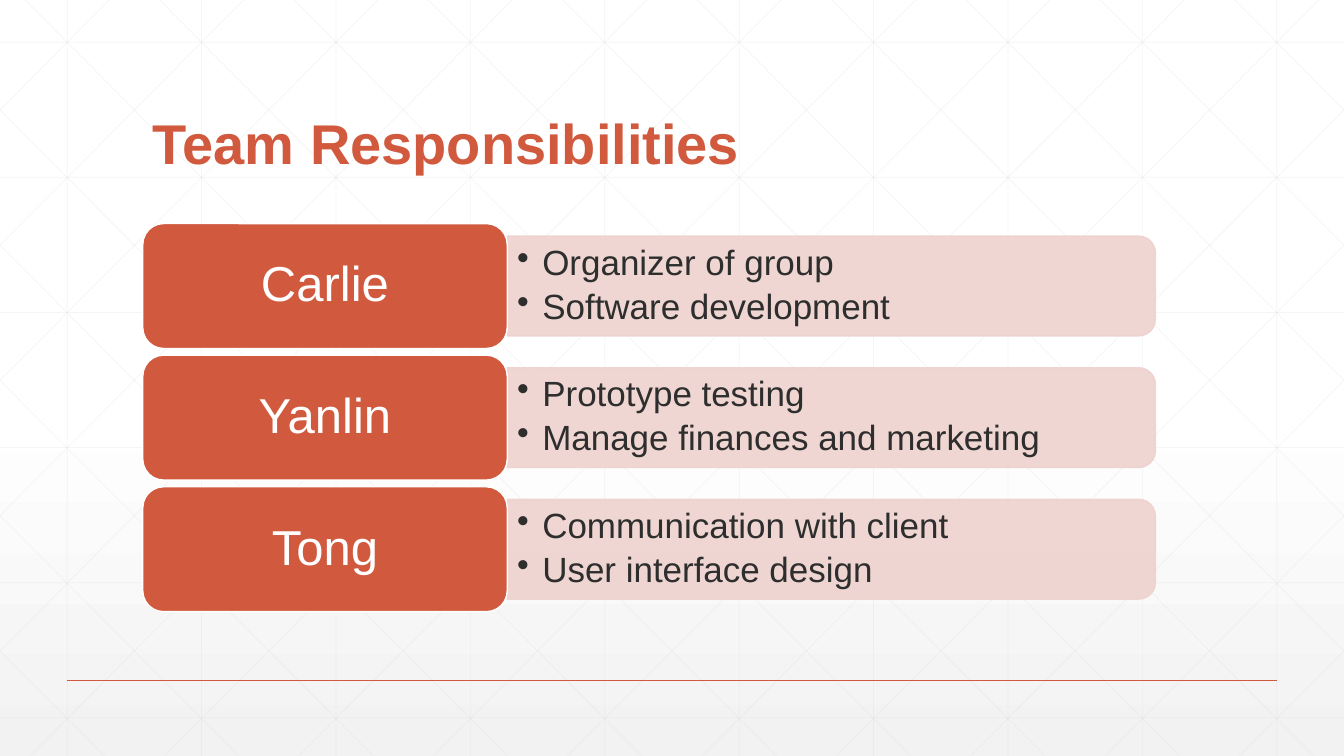
from copy import deepcopy
from dataclasses import dataclass

from lxml.etree import SubElement
from pptx import Presentation
from pptx.dml.color import RGBColor as Rgb
from pptx.enum.shapes import MSO_CONNECTOR as Link, MSO_SHAPE as Form
from pptx.enum.text import MSO_ANCHOR as Anchor, PP_ALIGN as Align
from pptx.oxml.ns import qn
from pptx.shapes.autoshape import Shape
from pptx.slide import Slide
from pptx.text.text import TextFrame as Frame
from pptx.util import Pt


@dataclass(frozen=True)
class Theme:
    font: str = "Arial"
    main: str = "D15A3E"
    tint: str = "EED2CE"
    ink: str = "2D2E2D"
    white: str = "FFFFFF"
    shade: str = "F2F2F2"
    mesh: str = "D9D9D9"
    head: float = 40
    name: float = 35
    task: float = 25


@dataclass(frozen=True)
class Member:
    name: str
    tasks: tuple[str, ...]


@dataclass(frozen=True)
class Stroke:
    x1: float
    y1: float
    x2: float
    y2: float


THEME = Theme()
WIDE, HIGH = 960, 540
STEP = 96
TEAM = (
    Member("Carlie", ("Organizer of group", "Software development")),
    Member("Yanlin", ("Prototype testing", "Manage finances and marketing")),
    Member("Tong", ("Communication with client", "User interface design")),
)


def fade(shape: Shape, share: int) -> None:
    for tone in shape.element.spPr.iter(qn("a:srgbClr")):
        SubElement(tone, qn("a:alpha")).set("val", str(share * 1000))


def draw(slide: Slide, stroke: Stroke, color: str, width: float, share: int = 100) -> None:
    line = slide.shapes.add_connector(
        Link.STRAIGHT, Pt(stroke.x1), Pt(stroke.y1), Pt(stroke.x2), Pt(stroke.y2))
    line.line.color.rgb = Rgb.from_string(color)
    line.line.width = Pt(width)
    if share < 100:
        fade(line, share)
    SubElement(line.element.spPr, qn("a:effectLst"))


def slant(start: float) -> Stroke:
    run = 536.6
    slope = HIGH / run
    left, right = max(0, start), min(WIDE, start + run)
    return Stroke(left, (left - start) * slope, right, (right - start) * slope)


def flip(stroke: Stroke) -> Stroke:
    return Stroke(WIDE - stroke.x1, stroke.y1, WIDE - stroke.x2, stroke.y2)


def mesh(slide: Slide) -> None:
    down = [Stroke(x, 0, x, HIGH) for x in range(48, WIDE, STEP)]
    flat = [Stroke(0, y, WIDE, y) for y in (30.2 + 96.5 * i for i in range(6))]
    fall = [slant(18 + STEP * i) for i in range(-5, 10)]
    rise = [flip(stroke) for stroke in fall]
    for stroke in down + flat + fall + rise:
        draw(slide, stroke, THEME.mesh, 0.5, 25)


def paint(slide: Slide) -> None:
    fill = slide.background.fill
    fill.gradient()
    fill.gradient_angle = 270
    first = slide.element.xpath(".//a:gs")[0]
    first.addnext(deepcopy(first))
    tones = ((0, THEME.white), (0.53, THEME.white), (1, THEME.shade))
    for stop, (place, color) in zip(fill.gradient_stops, tones):
        stop.position = place
        stop.color.rgb = Rgb.from_string(color)


def block(slide: Slide, form: Form, left: float, top: float, width: float,
          height: float, fill: str, edge: str) -> Shape:
    shape = slide.shapes.add_shape(form, Pt(left), Pt(top), Pt(width), Pt(height))
    shape.shadow.inherit = False
    shape.fill.solid()
    shape.fill.fore_color.rgb = Rgb.from_string(fill)
    shape.line.color.rgb = Rgb.from_string(edge)
    shape.line.width = Pt(1)
    return shape


def write(frame: Frame, lines: tuple[str, ...], size: float, color: str,
          align: Align = Align.LEFT, anchor: Anchor = Anchor.MIDDLE,
          bold: bool = False, dots: bool = False) -> None:
    frame.word_wrap = True
    frame.vertical_anchor = anchor
    for i, text in enumerate(lines):
        para = frame.add_paragraph() if i else frame.paragraphs[0]
        para.alignment = align
        para.line_spacing = 0.9
        if dots:
            para.space_after = Pt(4.5)
            props = para._p.get_or_add_pPr()
            props.set("marL", str(Pt(18)))
            props.set("indent", str(-Pt(18)))
            SubElement(props, qn("a:buChar")).set("char", "•")
        run = para.add_run()
        run.text = text
        run.font.name = THEME.font
        run.font.size = Pt(size)
        run.font.bold = bold
        run.font.color.rgb = Rgb.from_string(color)


def row(slide: Slide, member: Member, mid: float) -> None:
    edge, long, thick = 362.3, 463, 71.3
    bar = block(slide, Form.ROUND_2_SAME_RECTANGLE, edge + (long - thick) / 2,
                mid - long / 2, thick, long, THEME.tint, THEME.tint)
    bar.rotation = 90
    fade(bar, 90)
    box = slide.shapes.add_textbox(Pt(edge), Pt(mid - 32.4), Pt(459.4), Pt(64.8))
    write(box.text_frame, member.tasks, THEME.task, THEME.ink, dots=True)
    card = block(slide, Form.ROUNDED_RECTANGLE, 102, mid - 44.6, 260.3, 89.2,
                 THEME.main, THEME.white)
    write(card.text_frame, (member.name,), THEME.name, THEME.white, Align.CENTER)


def main() -> None:
    deck = Presentation()
    deck.slide_width, deck.slide_height = Pt(WIDE), Pt(HIGH)
    slide = deck.slides.add_slide(deck.slide_layouts[6])
    paint(slide)
    mesh(slide)
    draw(slide, Stroke(48, 486, 912, 486), THEME.main, 1)
    title = slide.shapes.add_textbox(Pt(102), Pt(39.6), Pt(756), Pt(90))
    write(title.text_frame, ("Team Responsibilities",), THEME.head, THEME.main,
          anchor=Anchor.BOTTOM, bold=True)
    for i, member in enumerate(TEAM):
        row(slide, member, 204.3 + 94 * i)
    deck.save("out.pptx")


if __name__ == "__main__":
    main()
